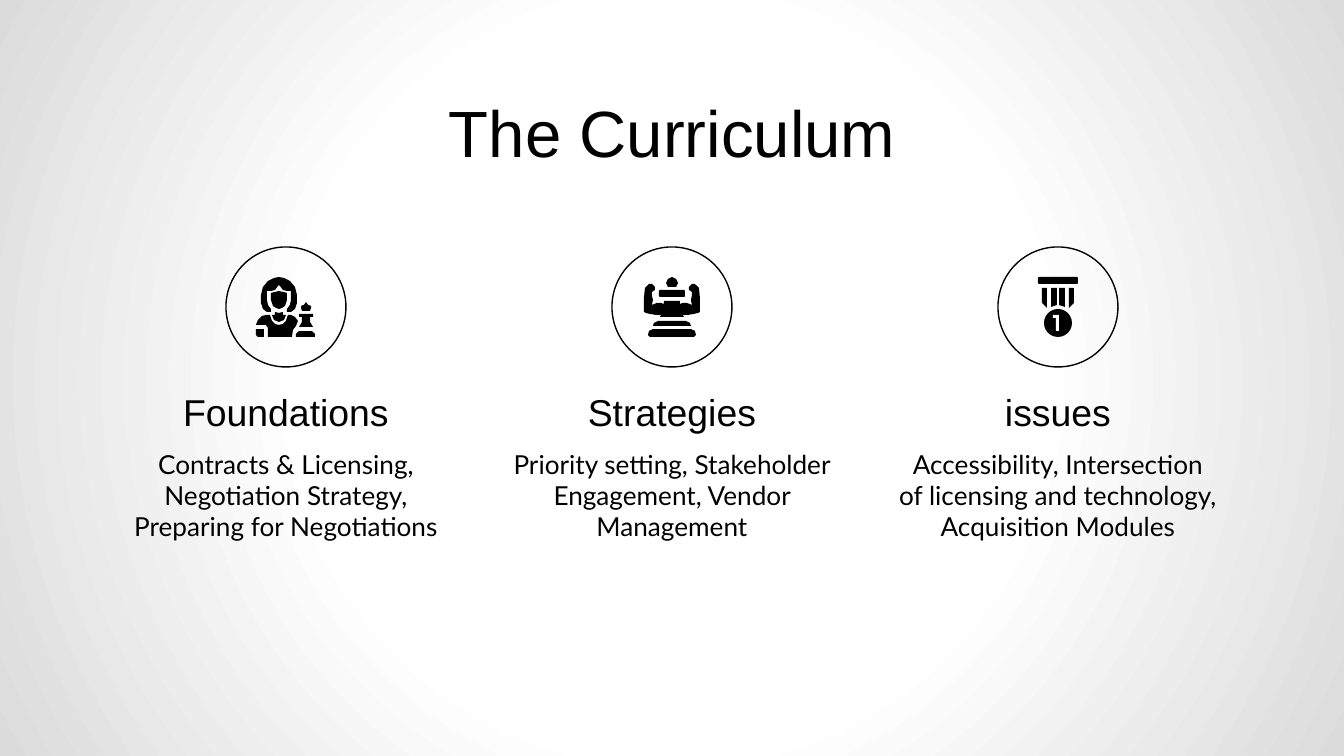
from dataclasses import dataclass

from pptx import Presentation, util as u
from pptx.enum import shapes, text
from pptx.oxml import parse_xml
from pptx.oxml.ns import nsdecls, qn

SCALE = 914400 / 134.4  # EMU in one px
WIDTH, HEIGHT = 1344, 756
COLUMN_WIDTH, COLUMN_STEP = 346, 386
CIRCLE_TOP, CIRCLE_SIZE = 247, 120
ICON_TOP = 277
INSET = 13
COLORS = {"ink": "000000", "paper": "FFFFFF", "edge": "DBDBDB"}

Points = list[tuple[int, int]]


@dataclass(frozen=True)
class Outline:
    points: Points
    color: str = "ink"


@dataclass(frozen=True)
class Preset:
    kind: shapes.MSO_SHAPE
    box: tuple[int, int, int, int]
    color: str = "ink"


@dataclass(frozen=True)
class Column:
    heading: str
    description: str
    icon: list[Outline | Preset]
    icon_shift: int = 0


@dataclass(frozen=True)
class TextStyle:
    font: str
    size: int
    anchor: text.MSO_ANCHOR = text.MSO_ANCHOR.TOP


TITLE = TextStyle("Arial", 35)
HEADING = TextStyle("Arial", 20, text.MSO_ANCHOR.BOTTOM)
DESCRIPTION = TextStyle("Lato", 14)


def px(length: int) -> u.Emu:
    return u.Emu(round(length * SCALE))


def mirrored(half: Points) -> Points:
    """Complete a right half with its reflection in the axis x = 0."""
    return half + [(-x, y) for x, y in reversed(half)]


PERSON = [
    Outline(mirrored([(0, 14), (4, 15), (8, 16), (8, 23), (6, 29), (3, 31), (0, 32)])),
    Outline(mirrored([(0, 0), (5, 1), (11, 4), (16, 10), (18, 18), (18, 26), (16, 32),
                      (12, 35), (8, 35), (8, 32), (11, 28), (12, 23), (12, 14), (8, 14),
                      (4, 13), (1, 9), (0, 8)])),
    Outline(mirrored([(0, 36), (4, 35), (4, 38), (7, 38), (5, 43), (0, 45)])),
    Outline([(-23, 52), (-15, 52), (-15, 60), (-21, 60), (-23, 58)]),
    Outline([(-12, 38), (-9, 38), (-7, 44), (-4, 47), (0, 48), (4, 47), (7, 44), (9, 38),
             (12, 38), (16, 40), (19, 44), (17, 49), (14, 53), (13, 60), (-11, 60),
             (-11, 51), (-13, 48), (-23, 48), (-21, 43), (-17, 39)]),
    Outline([(27, 25), (29, 28), (32, 29), (32, 31), (31, 34), (23, 34), (22, 31),
             (22, 29), (25, 28)]),
    Outline([(20, 37), (34, 37), (34, 40), (31, 40), (31, 45), (34, 50), (20, 50),
             (23, 45), (23, 40), (20, 40)]),
    Outline([(20, 54), (33, 54), (36, 57), (36, 60), (17, 60), (17, 57)]),
]
STRONG_ARMS = [
    Outline(mirrored([(19, 52), (23, 54), (24, 58), (22, 60)])),
    Outline(mirrored([(14, 44), (18, 46), (19, 49)])),
    Outline(mirrored([(0, 0), (4, 2), (6, 6), (4, 10)])),
    Preset(shapes.MSO_SHAPE.ROUNDED_RECTANGLE, (-13, 13, 26, 7)),
    Outline(mirrored([(8, 24), (8, 27), (11, 26), (15, 26), (20, 28), (19, 23), (20, 19),
                      (20, 15), (17, 13), (17, 10), (20, 7), (23, 7), (27, 11), (28, 21),
                      (28, 35), (26, 36), (22, 37), (16, 38), (11, 38), (12, 40)])),
]
MEDAL = [
    Preset(shapes.MSO_SHAPE.ROUNDED_RECTANGLE, (-20, 0, 40, 7)),
    *[Outline([(side * x, y) for x, y in ribbon])
      for side in (-1, 1)
      for ribbon in ([(1, 11), (7, 11), (7, 30), (1, 28)],
                     [(11, 11), (16, 11), (16, 26), (11, 31)])],
    Preset(shapes.MSO_SHAPE.OVAL, (-14, 32, 28, 28)),
    Outline([(-5, 38), (1, 38), (1, 54), (-2, 54), (-2, 41), (-5, 41)], "paper"),
]
COLUMNS = [
    Column("Foundations",
           "Contracts & Licensing, Negotiation Strategy, Preparing for Negotiations",
           PERSON, -7),
    Column("Strategies",
           "Priority setting, Stakeholder Engagement, Vendor Management", STRONG_ARMS),
    Column("issues",
           "Accessibility, Intersection of licensing and technology, Acquisition Modules",
           MEDAL),
]


def paint_background(slide) -> None:
    slide.background.fill.gradient()
    gradient = slide.element.find(".//" + qn("a:gradFill"))
    stops = "".join(
        f'<a:gs pos="{percent * 1000}"><a:srgbClr val="{COLORS[color]}"/></a:gs>'
        for percent, color in ((0, "paper"), (48, "paper"), (100, "edge")))
    gradient.getparent().replace(gradient, parse_xml(
        f'<a:gradFill {nsdecls("a")}><a:gsLst>{stops}</a:gsLst><a:path path="circle">'
        '<a:fillToRect l="50000" t="50000" r="50000" b="50000"/></a:path></a:gradFill>'))


def write_text(shape, box: tuple[int, int, int, int], words: str, style: TextStyle) -> None:
    """Place a text shape and fill it with one centred paragraph."""
    shape.left, shape.top, shape.width, shape.height = map(px, box)
    frame = shape.text_frame
    frame.word_wrap = True
    frame.auto_size = text.MSO_AUTO_SIZE.NONE
    frame.vertical_anchor = style.anchor
    frame.margin_left = frame.margin_right = px(INSET)
    frame.margin_top = frame.margin_bottom = px(INSET)
    paragraph = frame.paragraphs[0]
    properties = paragraph._p.get_or_add_pPr()
    properties.set("marL", "0")
    properties.set("indent", "0")
    properties.append(parse_xml(f'<a:buNone {nsdecls("a")}/>'))
    paragraph.alignment = text.PP_ALIGN.CENTER
    paragraph.space_before = u.Pt(0)
    run = paragraph.add_run()
    run.text = words
    run.font.name, run.font.size, run.font.bold = style.font, u.Pt(style.size), False
    run.font.color.rgb = u_color("ink")


def u_color(name: str):
    """Look up a named colour as an RGB value."""
    from pptx.dml.color import RGBColor
    return RGBColor.from_string(COLORS[name])


def draw_circle(slide, center: int) -> None:
    circle = slide.shapes.add_shape(
        shapes.MSO_SHAPE.OVAL, px(center - CIRCLE_SIZE // 2), px(CIRCLE_TOP),
        px(CIRCLE_SIZE), px(CIRCLE_SIZE))
    circle.shadow.inherit = False
    circle.fill.background()
    circle.line.color.rgb = u_color("ink")
    circle.line.width = u.Pt(0.75)


def draw_icon(slide, parts: list[Outline | Preset], axis: int) -> None:
    group = slide.shapes.add_group_shape()
    for part in parts:
        if isinstance(part, Preset):
            left, top, width, height = part.box
            shape = group.shapes.add_shape(
                part.kind, px(axis + left), px(ICON_TOP + top), px(width), px(height))
        else:
            builder = group.shapes.build_freeform(*part.points[0], scale=SCALE)
            builder.add_line_segments(part.points[1:], close=True)
            shape = builder.convert_to_shape(px(axis), px(ICON_TOP))
        shape.shadow.inherit = False
        shape.fill.solid()
        shape.fill.fore_color.rgb = u_color(part.color)
        shape.line.fill.background()


def main() -> None:
    presentation = Presentation()
    presentation.slide_width, presentation.slide_height = px(WIDTH), px(HEIGHT)
    slide = presentation.slides.add_slide(presentation.slide_layouts.get_by_name("Comparison"))
    paint_background(slide)
    write_text(slide.shapes.title, (106, 79, 1133, 85), "The Curriculum", TITLE)
    _, *bodies, spare = slide.placeholders
    spare.element.getparent().remove(spare.element)
    for index, (column, body) in enumerate(zip(COLUMNS, bodies)):
        center = WIDTH // 2 + (index - 1) * COLUMN_STEP
        left = center - COLUMN_WIDTH // 2
        heading = slide.shapes.add_textbox(0, 0, 0, 0)
        write_text(heading, (left, 388, COLUMN_WIDTH, 59), column.heading, HEADING)
        write_text(body, (left, 435, COLUMN_WIDTH, 128), column.description, DESCRIPTION)
        draw_circle(slide, center)
        draw_icon(slide, column.icon, center + column.icon_shift)
    presentation.save("out.pptx")


if __name__ == "__main__":
    main()
